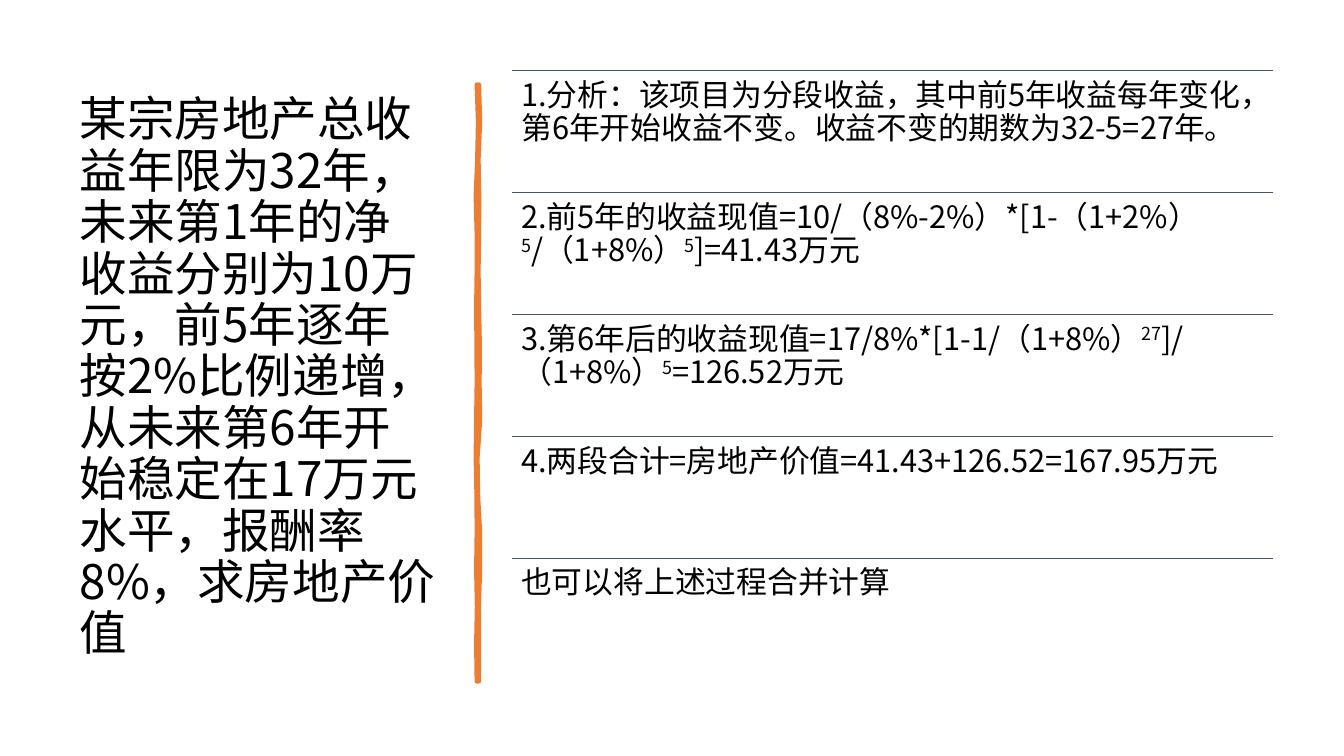
from lxml import etree
from pptx import Presentation
from pptx.dml.color import RGBColor
from pptx.enum.shapes import MSO_CONNECTOR
from pptx.enum.text import MSO_ANCHOR, MSO_AUTO_SIZE, PP_ALIGN
from pptx.oxml.ns import qn
from pptx.util import Inches, Pt

BLACK = RGBColor(0x00, 0x00, 0x00)
ORANGE = RGBColor(0xED, 0x7D, 0x31)
SLATE = RGBColor(0x44, 0x54, 0x6A)
STRAIGHT = MSO_CONNECTOR.STRAIGHT
TOP, MIDDLE = MSO_ANCHOR.TOP, MSO_ANCHOR.MIDDLE
NO_FIT = MSO_AUTO_SIZE.NONE
LEFT = PP_ALIGN.LEFT

QUESTION = ("某宗房地产总收益年限为32年，未来第1年的净收益分别为10万元，"
            "前5年逐年按2%比例递增，从未来第6年开始稳定在17万元水平，"
            "报酬率8%，求房地产价值")
# Every second part of a step is an exponent.
STEPS = [
    ["1.分析：该项目为分段收益，其中前5年收益每年变化，"
     "第6年开始收益不变。收益不变的期数为32-5=27年。"],
    ["2.前5年的收益现值=10/（8%-2%）*[1-（1+2%）", "5", "/（1+8%）", "5", "]=41.43万元"],
    ["3.第6年后的收益现值=17/8%*[1-1/（1+8%）", "27", "]/（1+8%）", "5", "=126.52万元"],
    ["4.两段合计=房地产价值=41.43+126.52=167.95万元"],
    ["也可以将上述过程合并计算"],
]
STEP_LEFT, STEP_TOP, STEP_WIDTH, STEP_HEIGHT = 38.11, 9.33, 56.64, 16.13
RIGHT_EDGE = [1, 2, 0.5, 1.2, 1, 0.5, 1, 1.8, 1.5, 2, -0.5, 0, 2, 2, 0.8, 1, 1]
LEFT_EDGE = [-1, 0.3, -0.5, -2, -1, -1, -1.5, -1.2, -1, -1.5, -2, -1.2, -1, -1.5,
             -0.8, -1.5, -1]


class SolutionSlide:
    """Draws the parts of a worked solution, placed in percent of the slide."""

    def __init__(self, deck, font_name):
        self.deck = deck
        self.font_name = font_name
        self.slide = deck.slides.add_slide(deck.slide_layouts[5])

    def x(self, percent):
        return round(self.deck.slide_width * percent / 100)

    def y(self, percent):
        return round(self.deck.slide_height * percent / 100)

    def style(self, paragraph, size):
        paragraph.alignment = LEFT
        paragraph.line_spacing = 0.9
        for run in paragraph.runs:
            run.font.size = Pt(size)
            run.font.name = self.font_name
            run.font.color.rgb = BLACK
            east_asian = etree.SubElement(run.font._element, qn("a:ea"))
            east_asian.set("typeface", self.font_name)

    def title(self, text, left, top, width, height):
        question = self.slide.shapes.title
        question.left, question.top = self.x(left), self.y(top)
        question.width, question.height = self.x(width), self.y(height)
        frame = question.text_frame
        frame.text = text
        frame.word_wrap, frame.auto_size = True, NO_FIT
        frame.vertical_anchor = MIDDLE
        self.style(frame.paragraphs[0], 34)

    def brush_stroke(self, center, top, height):
        def edge(offsets):
            gap = height / (len(offsets) - 1)
            return [(self.x(center) + Inches(offset / 100), self.y(top + row * gap))
                    for row, offset in enumerate(offsets)]

        outline = edge(RIGHT_EDGE) + edge(LEFT_EDGE)[::-1]
        builder = self.slide.shapes.build_freeform(*outline[0])
        builder.add_line_segments(outline[1:], close=True)
        stroke = builder.convert_to_shape()
        stroke.shadow.inherit = False
        stroke.fill.solid()
        stroke.fill.fore_color.rgb = ORANGE
        stroke.line.color.rgb = ORANGE
        stroke.line.width = Pt(3.25)
        etree.SubElement(stroke.line._get_or_add_ln(), qn("a:round"))

    def rule(self, left, top, width):
        line = self.slide.shapes.add_connector(
            STRAIGHT, self.x(left), self.y(top), self.x(left + width), self.y(top))
        line.line.color.rgb = SLATE
        line.line.width = Pt(1)
        etree.SubElement(line._element.spPr, qn("a:effectLst"))

    def step(self, parts, left, top, width, height):
        box = self.slide.shapes.add_textbox(
            self.x(left), self.y(top), self.x(width), self.y(height))
        frame = box.text_frame
        frame.word_wrap, frame.auto_size = True, NO_FIT
        frame.vertical_anchor = TOP
        frame.margin_left = frame.margin_right = Inches(0.09)
        frame.margin_top = frame.margin_bottom = Inches(0.09)
        paragraph = frame.paragraphs[0]
        for position, part in enumerate(parts):
            run = paragraph.add_run()
            run.text = part
            if position % 2:
                run.font._element.set("baseline", "30000")
        self.style(paragraph, 22)


def main():
    deck = Presentation()
    deck.slide_width, deck.slide_height = Inches(13.33), Inches(7.5)
    solution = SolutionSlide(deck, "Noto Sans CJK SC")
    solution.title(QUESTION, 5.18, 9.33, 28.06, 81.47)
    solution.brush_stroke(35.56, 11.2, 78.93)
    for row, parts in enumerate(STEPS):
        top = STEP_TOP + row * STEP_HEIGHT
        solution.rule(STEP_LEFT, top, STEP_WIDTH)
        solution.step(parts, STEP_LEFT, top, STEP_WIDTH, STEP_HEIGHT)
    deck.save("out.pptx")


if __name__ == "__main__":
    main()
